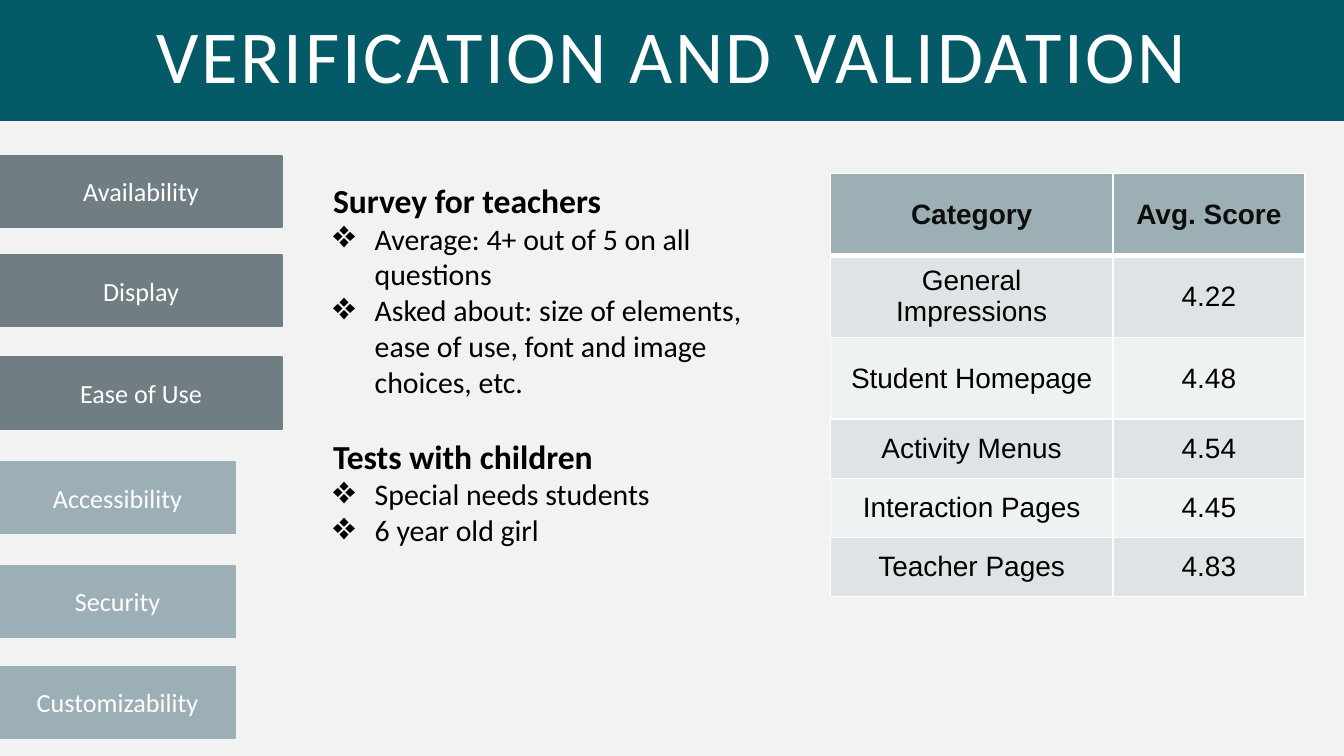
import pptx
import pptx.dml.color
import pptx.enum.shapes
import pptx.enum.text
import pptx.oxml.ns
import pptx.util
from lxml import etree

# Grid of one-inch units on a 16:9 page
COLUMNS = 10
ROWS = COLUMNS * 9 / 16
CENTER = pptx.enum.text.PP_ALIGN.CENTER
MIDDLE = pptx.enum.text.MSO_ANCHOR.MIDDLE


def color(value):
    return pptx.dml.color.RGBColor.from_string(value)


def add_xml(parent, tag, **attributes):
    return etree.SubElement(parent, pptx.oxml.ns.qn(tag), attributes)


class SlideBuilder:
    white, black = "FFFFFF", "000000"
    teal, dark_tab, light_tab = "045A67", "707E83", "9CAFB6"
    header_fill, header_text, bands = "9BAFB5", "0D0D0D", ("DEE3E5", "EFF2F3")
    body_font, table_font = "Calibri", "Arial"

    def __init__(self, deck):
        self.slide = deck.slides.add_slide(deck.slide_layouts[6])
        self.column = deck.slide_width / COLUMNS
        self.row = deck.slide_height / ROWS
        background = self.slide.background.fill
        background.solid()
        background.fore_color.rgb = color("F2F2F2")

    def place(self, left, top, width, height):
        return (round(left * self.column), round(top * self.row),
                round(width * self.column), round(height * self.row))

    def format_text(self, para, size, shade, font=body_font, bold=False):
        for span in para.runs:
            span.font.size = pptx.util.Pt(size)
            span.font.name = font
            span.font.bold = bold
            span.font.color.rgb = color(shade)

    def bar(self, text, area, fill, size, line_width=1):
        """Filled rectangle with one centred line of text."""
        box = self.slide.shapes.add_shape(
            pptx.enum.shapes.MSO_SHAPE.RECTANGLE, *self.place(*area))
        box.shadow.inherit = False
        box.fill.solid()
        box.fill.fore_color.rgb = color(fill)
        box.line.color.rgb = color(fill)
        box.line.width = pptx.util.Pt(line_width)
        box.text_frame.text = text
        box.text_frame.vertical_anchor = MIDDLE
        para = box.text_frame.paragraphs[0]
        para.alignment = CENTER
        self.format_text(para, size, self.white)
        return para

    def title(self, text, area):
        """Bar with letter-spaced text on tight lines."""
        para = self.bar(text, area, self.teal, 40, line_width=2.5)
        para.line_spacing = 0.9
        para.runs[0].font._element.set("spc", "150")

    def bullet(self, para):
        indent = round(0.31 * self.column)
        properties = para._p.get_or_add_pPr()
        properties.set("marL", str(indent))
        properties.set("indent", str(-indent))
        add_xml(properties, "a:buSzPct", val="130000")
        add_xml(properties, "a:buChar", char="❖")

    def sections(self, content, area):
        """Bold headings, each followed by its bullets."""
        frame = self.slide.shapes.add_textbox(*self.place(*area)).text_frame
        frame.word_wrap = True
        para = frame.paragraphs[0]
        for number, (heading, points) in enumerate(content):
            if number:
                para = frame.add_paragraph()
                para.space_before = pptx.util.Pt(19.5)
            para.text = heading
            self.format_text(para, 18, self.black, bold=True)
            for point in points:
                para = frame.add_paragraph()
                para.text = point
                self.bullet(para)
                self.format_text(para, 16, self.black)

    def cell_borders(self, cell, top, bottom):
        properties = cell._tc.get_or_add_tcPr()
        for side, points in (("L", 1), ("R", 1), ("T", top), ("B", bottom)):
            line = add_xml(properties, f"a:ln{side}", w=str(pptx.util.Pt(points)))
            add_xml(add_xml(line, "a:solidFill"), "a:srgbClr", val=self.white)

    def score_table(self, records, area, widths, heights):
        table = self.slide.shapes.add_table(
            len(records), len(widths), *self.place(*area)).table
        for column, width in zip(table.columns, widths):
            column.width = round(width * self.column)
        for row, height in zip(table.rows, heights):
            row.height = round(height * self.row)
        for r, record in enumerate(records):
            header = r == 0
            for c, text in enumerate(record):
                cell = table.cell(r, c)
                cell.text = text
                cell.vertical_anchor = MIDDLE
                cell.margin_left = cell.margin_right = round(0.11 * self.column)
                self.cell_borders(cell, 3 if r == 1 else 1, 3 if header else 1)
                cell.fill.solid()
                cell.fill.fore_color.rgb = color(
                    self.header_fill if header else self.bands[(r - 1) % 2])
                para = cell.text_frame.paragraphs[0]
                para.alignment = CENTER
                self.format_text(para, 15, self.header_text if header else self.black,
                                 self.table_font, header)


def main():
    deck = pptx.Presentation()
    deck.slide_width = pptx.util.Inches(COLUMNS)
    deck.slide_height = pptx.util.Inches(ROWS)
    page = SlideBuilder(deck)

    # Title band
    page.title("VERIFICATION AND VALIDATION", (0, 0, COLUMNS, 0.88))

    # Evaluation methods
    page.sections([
        ("Survey for teachers", [
            "Average: 4+ out of 5 on all questions",
            "Asked about: size of elements, ease of use, font and image choices, etc.",
        ]),
        ("Tests with children", ["Special needs students", "6 year old girl"]),
    ], (2.38, 1.29, 3.42, 3.4))

    # Survey scores
    page.score_table([
        ("Category", "Avg. Score"),
        ("General Impressions", "4.22"),
        ("Student Homepage", "4.48"),
        ("Activity Menus", "4.54"),
        ("Interaction Pages", "4.45"),
        ("Teacher Pages", "4.83"),
    ], (6.18, 1.29, 3.53, 3.15), (2.1, 1.43), [0.61] * 3 + [0.44] * 3)

    # Quality tabs: wide dark group, then narrow light group
    tab_groups = (
        (2.1, page.dark_tab,
         (("Availability", 1.16), ("Display", 1.9), ("Ease of Use", 2.66))),
        (1.75, page.light_tab,
         (("Accessibility", 3.44), ("Security", 4.21), ("Customizability", 4.96))),
    )
    for width, fill, tabs in tab_groups:
        for label, top in tabs:
            page.bar(label, (0, top, width, 0.53), fill, 14)

    deck.save("out.pptx")


if __name__ == "__main__":
    main()
